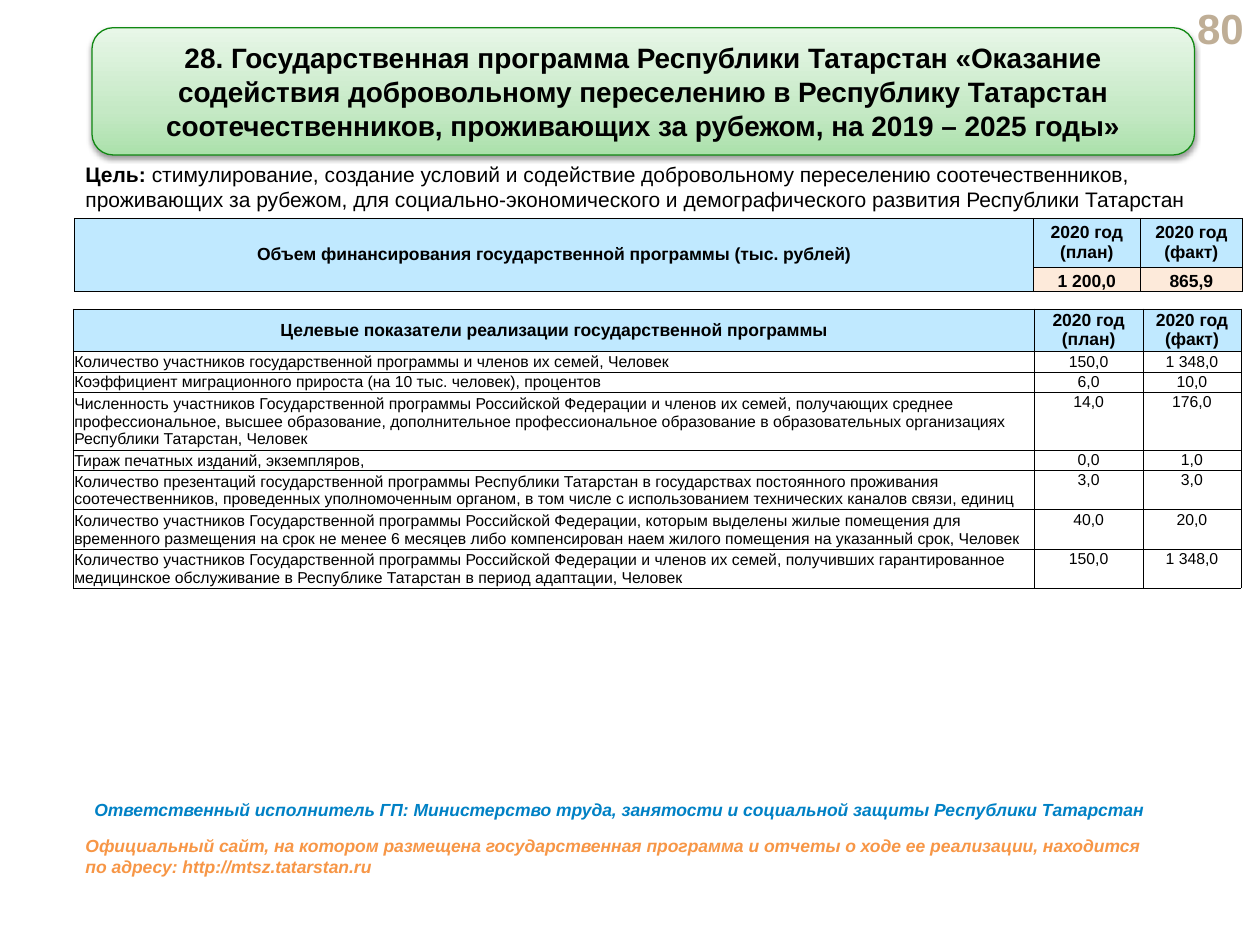
from dataclasses import dataclass

from pptx import Presentation
from pptx.dml.color import RGBColor
from pptx.enum.shapes import MSO_SHAPE
from pptx.enum.text import MSO_ANCHOR, PP_ALIGN
from pptx.oxml import parse_xml
from pptx.oxml.ns import nsdecls
from pptx.util import Inches, Pt


@dataclass(frozen=True)
class Theme:
    font: str = "Arial"
    black: str = "000000"
    number: str = "BFAE96"
    header: str = "C0E9FF"
    amount: str = "FDEADA"
    outline: str = "108812"
    executor: str = "0081C5"
    site: str = "F79646"
    gradient: tuple = ((0, "ABE1AB"), (35, "C5E9C5"), (100, "E8F7E8"))
    number_size: int = 24
    title_size: int = 16
    goal_size: int = 12
    header_size: int = 10
    body_size: int = 9
    border: float = 0.25


THEME = Theme()

PAGE_NUMBER = "80"
TITLE = ("28. Государственная программа Республики Татарстан «Оказание содействия "
         "добровольному переселению в Республику Татарстан соотечественников, "
         "проживающих за рубежом, на 2019 – 2025 годы»")
GOAL = (
    ("Цель: ", True),
    ("стимулирование, создание условий и содействие добровольному переселению "
     "соотечественников, проживающих за рубежом, для социально-экономического и "
     "демографического развития Республики Татарстан", False),
)
FUNDING = (
    ("Объем финансирования государственной программы (тыс. рублей)",
     "2020 год\n(план)", "2020 год\n(факт)"),
    ("", "1 200,0", "865,9"),
)
INDICATORS = (
    ("Целевые показатели реализации государственной программы",
     "2020 год\v(план)", "2020 год\v(факт)"),
    ("Количество участников государственной программы и членов их семей, Человек",
     "150,0", "1 348,0"),
    ("Коэффициент миграционного прироста (на 10 тыс. человек), процентов", "6,0", "10,0"),
    ("Численность участников Государственной программы Российской Федерации и членов "
     "их семей, получающих среднее профессиональное, высшее образование, дополнительное "
     "профессиональное образование в образовательных организациях Республики Татарстан, "
     "Человек", "14,0", "176,0"),
    ("Тираж печатных изданий, экземпляров,", "0,0", "1,0"),
    ("Количество презентаций государственной программы Республики Татарстан в государствах "
     "постоянного проживания соотечественников, проведенных уполномоченным органом, в том "
     "числе с использованием технических каналов связи, единиц", "3,0", "3,0"),
    ("Количество участников Государственной программы Российской Федерации, которым "
     "выделены жилые помещения для временного размещения на срок не менее 6 месяцев либо "
     "компенсирован наем жилого помещения на указанный срок, Человек", "40,0", "20,0"),
    ("Количество участников Государственной программы Российской Федерации и членов их "
     "семей, получивших гарантированное медицинское обслуживание в Республике Татарстан "
     "в период адаптации, Человек", "150,0", "1 348,0"),
)
EXECUTOR = ("Ответственный исполнитель ГП: Министерство труда, занятости и социальной "
            "защиты Республики Татарстан")
SITE = ("Официальный сайт, на котором размещена государственная программа и отчеты о ходе "
        "ее реализации, находится по адресу: http://mtsz.tatarstan.ru")

LINE_HEIGHTS = {1: 0.16, 2: 0.31, 3: 0.46}
INDICATOR_LINES = (1, 1, 3, 1, 2, 2, 2)


def style(paragraph, size, color=THEME.black, bold=True, italic=False, align=PP_ALIGN.LEFT):
    paragraph.alignment = align
    font = paragraph.font
    font.name, font.size = THEME.font, Pt(size)
    font.bold, font.italic = bold, italic
    font.color.rgb = RGBColor.from_string(color)


def add_text(slide, box, runs, size, anchor=MSO_ANCHOR.TOP, inset_top=0.05, **look):
    frame = slide.shapes.add_textbox(*map(Inches, box)).text_frame
    frame.word_wrap = True
    frame.vertical_anchor = anchor
    frame.margin_top = Inches(inset_top)
    paragraph = frame.paragraphs[0]
    style(paragraph, size, **look)
    for text, bold in runs:
        run = paragraph.add_run()
        run.text = text
        run.font.bold = bold


def add_title(slide):
    shape = slide.shapes.add_shape(
        MSO_SHAPE.ROUNDED_RECTANGLE, *map(Inches, (0.73, 0.22, 8.75, 1.01)))
    stops = "".join(f'<a:gs pos="{share * 1000}"><a:srgbClr val="{color}"/></a:gs>'
                    for share, color in THEME.gradient)
    properties = shape.element.spPr
    properties.insert(2, parse_xml(
        f'<a:gradFill {nsdecls("a")} rotWithShape="1"><a:gsLst>{stops}</a:gsLst>'
        '<a:lin ang="16200000" scaled="1"/></a:gradFill>'))
    shape.line.color.rgb = RGBColor.from_string(THEME.outline)
    shape.line.width = Pt(0.75)
    properties.append(parse_xml(
        f'<a:effectLst {nsdecls("a")}><a:outerShdw blurRad="{Pt(3.1)}" dist="{Pt(1.6)}" '
        f'dir="5400000" rotWithShape="0"><a:srgbClr val="{THEME.black}">'
        '<a:alpha val="38000"/></a:srgbClr></a:outerShdw></a:effectLst>'))
    frame = shape.text_frame
    frame.word_wrap = True
    frame.vertical_anchor = MSO_ANCHOR.MIDDLE
    frame.text = TITLE
    style(frame.paragraphs[0], THEME.title_size, align=PP_ALIGN.CENTER)


def add_borders(cell):
    properties = cell._tc.get_or_add_tcPr()
    for index, side in enumerate("LRTB"):
        properties.insert(index, parse_xml(
            f'<a:ln{side} {nsdecls("a")} w="{Pt(THEME.border)}"><a:solidFill>'
            f'<a:srgbClr val="{THEME.black}"/></a:solidFill></a:ln{side}>'))


def add_table(slide, left, top, widths, heights, content, header_inset, body):
    table = slide.shapes.add_table(
        len(heights), len(widths),
        *map(Inches, (left, top, sum(widths), sum(heights)))).table
    table.first_row = table.horz_banding = False
    for column, width in zip(table.columns, widths):
        column.width = Inches(width)
    for row, height in zip(table.rows, heights):
        row.height = Inches(height)
    for row_index, texts in enumerate(content):
        for column_index, text in enumerate(texts):
            cell = table.cell(row_index, column_index)
            is_header = row_index == 0
            is_label = column_index == 0
            side = header_inset if is_header else 0.01
            cell.margin_left = cell.margin_right = Inches(side)
            cell.margin_top = Inches(0 if is_header else 0.01)
            cell.margin_bottom = 0
            cell.vertical_anchor = (
                MSO_ANCHOR.MIDDLE if is_header or is_label else body["anchor"])
            fill = THEME.header if is_header else body["fill"]
            if fill:
                cell.fill.solid()
                cell.fill.fore_color.rgb = RGBColor.from_string(fill)
            else:
                cell.fill.background()
            add_borders(cell)
            cell.text = text
            for paragraph in cell.text_frame.paragraphs:
                style(paragraph, THEME.header_size if is_header else body["size"],
                      bold=is_header or body["bold"],
                      align=PP_ALIGN.LEFT if is_label and not is_header else PP_ALIGN.CENTER)
    return table


def main():
    presentation = Presentation()
    presentation.slide_width, presentation.slide_height = Inches(10), Inches(7.5)
    slide = presentation.slides.add_slide(presentation.slide_layouts[6])

    add_text(slide, (9.33, 0.05, 0.64, 0.34), [(PAGE_NUMBER, True)], THEME.number_size,
             anchor=MSO_ANCHOR.MIDDLE, color=THEME.number, align=PP_ALIGN.RIGHT)
    funding = add_table(
        slide, 0.59, 1.73, (7.61, 0.85, 0.81), (0.39, 0.19), FUNDING, 0.06,
        {"anchor": MSO_ANCHOR.BOTTOM, "fill": THEME.amount,
         "size": THEME.header_size, "bold": True})
    funding.cell(0, 0).merge(funding.cell(1, 0))
    add_text(slide, (0.58, 1.23, 9.27, 0.5), GOAL, THEME.goal_size, anchor=MSO_ANCHOR.MIDDLE)
    add_title(slide)
    add_table(
        slide, 0.58, 2.45, (7.63, 0.86, 0.78),
        (0.34, *(LINE_HEIGHTS[lines] for lines in INDICATOR_LINES)), INDICATORS, 0,
        {"anchor": MSO_ANCHOR.TOP, "fill": None, "size": THEME.body_size, "bold": False})
    add_text(slide, (0.65, 6.24, 9.27, 0.34), [(EXECUTOR, True)], THEME.header_size,
             inset_top=0.1, color=THEME.executor, italic=True)
    add_text(slide, (0.58, 6.58, 8.59, 0.43), [(SITE, True)], THEME.header_size,
             color=THEME.site, italic=True)
    presentation.save("out.pptx")


if __name__ == "__main__":
    main()
